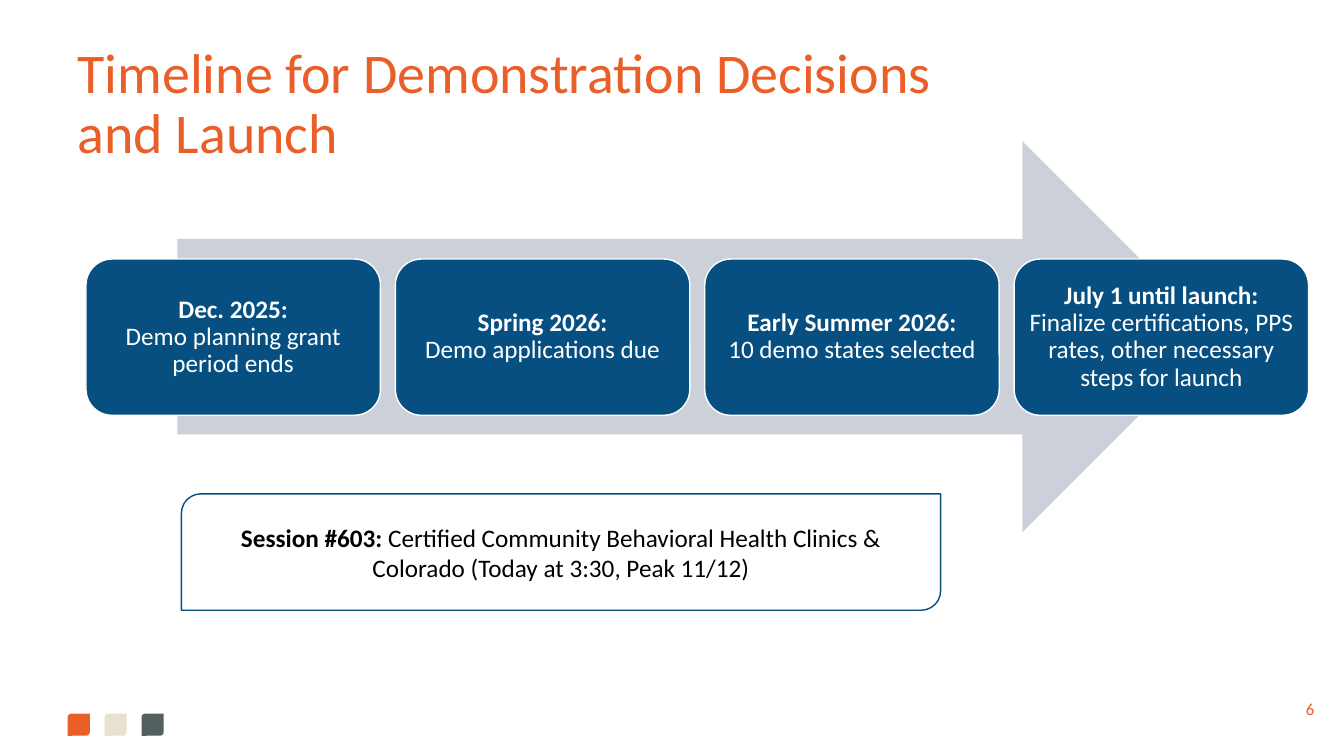
from pptx import Presentation
from pptx.dml.color import RGBColor
from pptx.enum.shapes import MSO_SHAPE
from pptx.enum.text import MSO_ANCHOR, PP_ALIGN
from pptx.util import Inches, Pt

ORANGE = RGBColor(0xEA, 0x5E, 0x28)
SAND = RGBColor(0xE8, 0xE0, 0xD1)
SLATE = RGBColor(0x53, 0x60, 0x5F)
GREY = RGBColor(0xCC, 0xD0, 0xD8)
NAVY = RGBColor(0x06, 0x4F, 0x80)
WHITE = RGBColor(0xFF, 0xFF, 0xFF)
BLACK = RGBColor(0x00, 0x00, 0x00)

MILESTONES = [
    ("Dec. 2025:", "Demo planning grant period ends"),
    ("Spring 2026:", "Demo applications due"),
    ("Early Summer 2026:", "10 demo states selected"),
    ("July 1 until launch:",
     "Finalize certifications, PPS rates, other necessary steps for launch"),
]


class TimelineSlide:
    """Draws styled elements on one slide, placed in percent of its width and height."""

    font = "Calibri"

    def __init__(self, prs):
        self.width, self.height = prs.slide_width, prs.slide_height
        self.shapes = prs.slides.add_slide(prs.slide_layouts[6]).shapes

    def box(self, x, y, w, h):
        return (int(self.width * x / 100), int(self.height * y / 100),
                int(self.width * w / 100), int(self.height * h / 100))

    def shape(self, kind, at, fill, line=None):
        sp = self.shapes.add_shape(kind, *self.box(*at))
        sp.shadow.inherit = False
        sp.fill.solid()
        sp.fill.fore_color.rgb = fill
        if line is None:
            sp.line.fill.background()
        else:
            sp.line.color.rgb = line
            sp.line.width = Pt(1)
        return sp

    def style(self, tf, size, color, align, spacing=1.0):
        tf.word_wrap = True
        tf.vertical_anchor = MSO_ANCHOR.MIDDLE
        for p in tf.paragraphs:
            p.alignment = align
            p.line_spacing = spacing
            for r in p.runs:
                r.font.name = self.font
                r.font.size = Pt(size)
                r.font.color.rgb = color

    def text(self, at, text, size, color, align, spacing=1.0):
        tf = self.shapes.add_textbox(*self.box(*at)).text_frame
        tf.text = text
        self.style(tf, size, color, align, spacing)

    def lead(self, p, heading, body):
        p.text = heading
        p.runs[0].font.bold = True
        p.add_run().text = body

    def card(self, at, heading, body):
        sp = self.shape(MSO_SHAPE.ROUNDED_RECTANGLE, at, NAVY, WHITE)
        tf = sp.text_frame
        tf.margin_left = tf.margin_right = Inches(0.07)
        tf.margin_top = tf.margin_bottom = Inches(0.07)
        self.lead(tf.paragraphs[0], heading + "\v", body)
        self.style(tf, 18, WHITE, PP_ALIGN.CENTER, 0.9)

    def callout(self, at, heading, body, second_line):
        sp = self.shape(MSO_SHAPE.ROUND_2_DIAG_RECTANGLE, at, WHITE, NAVY)
        tf = sp.text_frame
        self.lead(tf.paragraphs[0], heading, body)
        tf.add_paragraph().text = second_line
        self.style(tf, 18, BLACK, PP_ALIGN.CENTER)


def main():
    prs = Presentation()
    prs.slide_width, prs.slide_height = Inches(13.33), Inches(7.5)
    s = TimelineSlide(prs)

    for i, color in enumerate((ORANGE, SAND, SLATE)):
        s.shape(MSO_SHAPE.ROUND_2_DIAG_RECTANGLE,
                (5.03 + 2.75 * i, 94.4, 1.65, 2.93), color)
    s.text((5.03, 5.33, 89.95, 17.2),
           "Timeline for Demonstration Decisions\vand Launch",
           40, ORANGE, PP_ALIGN.LEFT, 0.9)
    s.text((94.97, 91.07, 5.03, 5.33), "6", 12, ORANGE, PP_ALIGN.CENTER)

    s.shape(MSO_SHAPE.RIGHT_ARROW, (13.2, 18.67, 77.42, 51.73), GREY)
    for i, (heading, body) in enumerate(MILESTONES):
        s.card((6.4 + 23.02 * i, 34.27, 21.91, 20.67), heading, body)
    s.callout((13.5, 65.33, 56.49, 15.4), "Session #603: ",
              "Certified Community Behavioral Health Clinics &",
              "Colorado (Today at 3:30, Peak 11/12)")

    prs.save("out.pptx")


if __name__ == "__main__":
    main()
